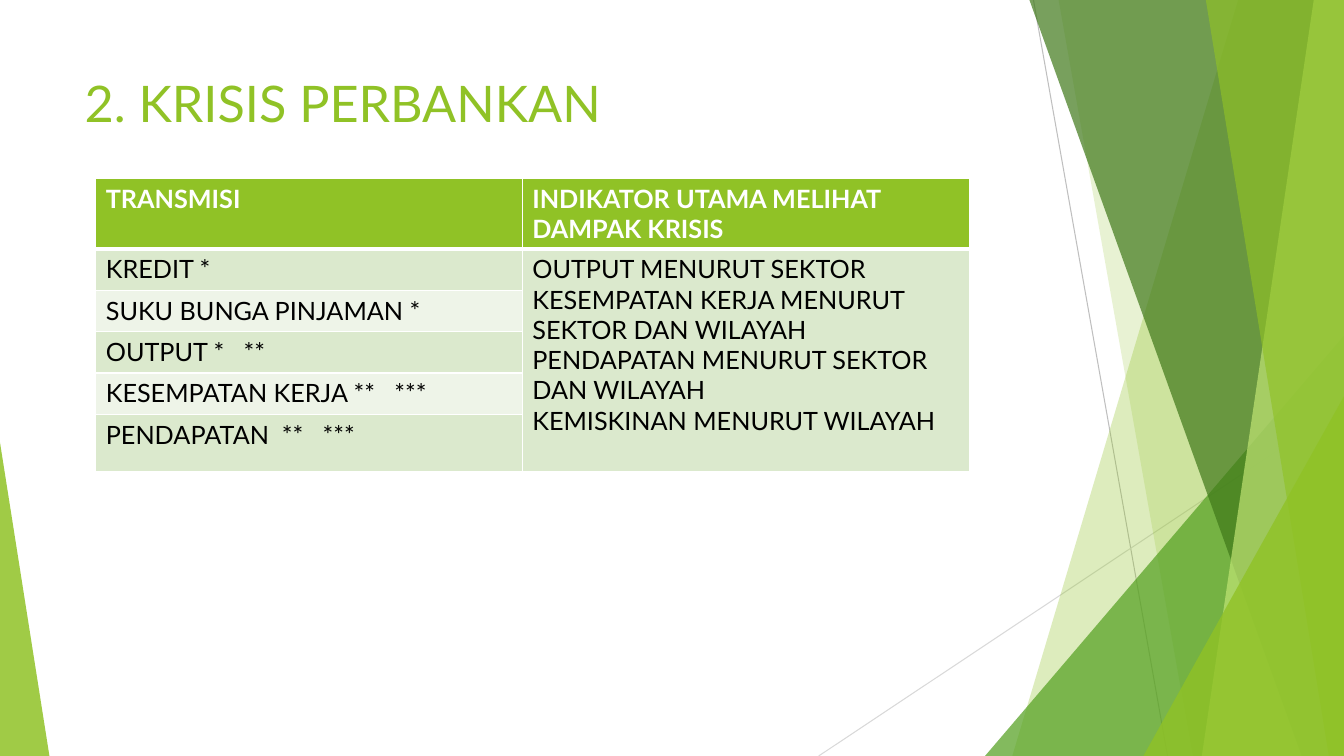
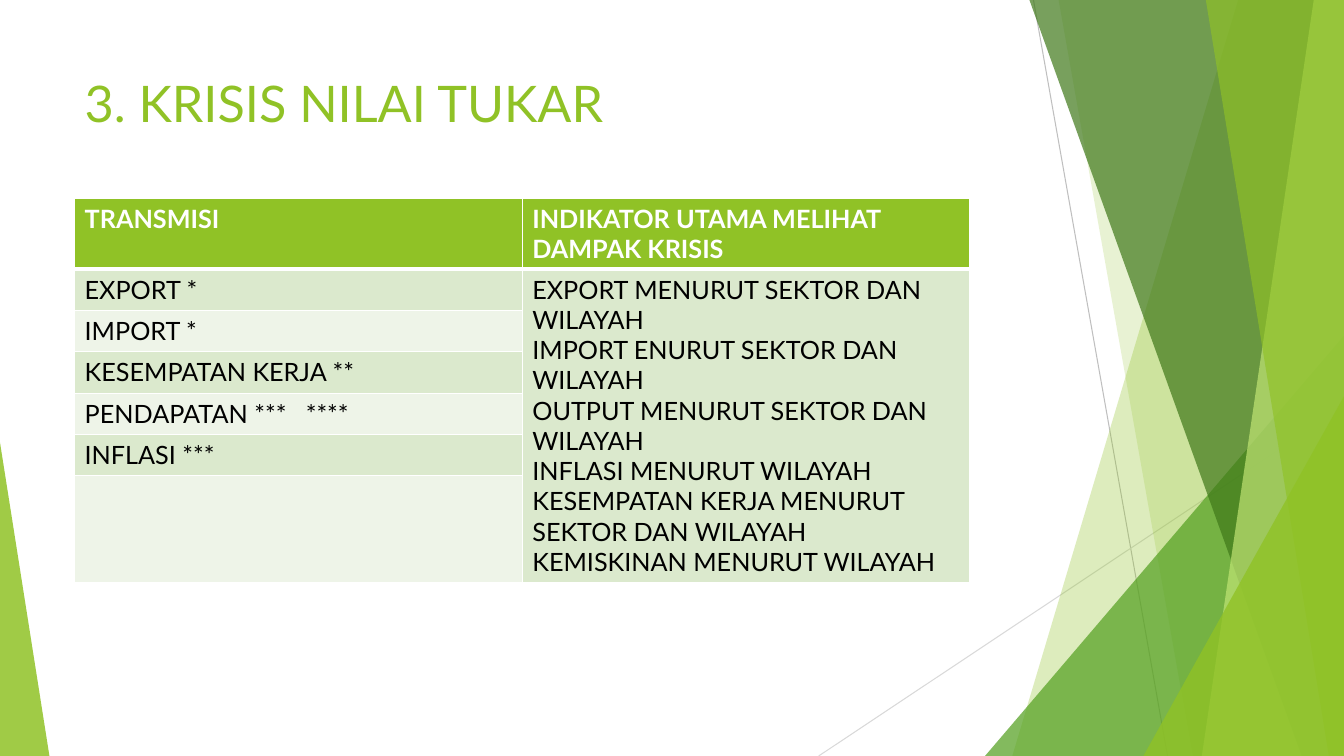
from lxml import etree
from pptx import Presentation
from pptx.dml.color import RGBColor
from pptx.enum import shapes
from pptx.oxml import ns
from pptx.util import Inches, Pt

# Content
HEADINGS = ("TRANSMISI", "INDIKATOR UTAMA MELIHAT DAMPAK KRISIS")
CRISES = [
    {
        "title": "2. KRISIS PERBANKAN",
        "at": (0.95, 1.77), "columns": (4.23, 4.44), "height": 2.9,
        "channels": ["KREDIT *", "SUKU BUNGA PINJAMAN *", "OUTPUT *   **",
                     "KESEMPATAN KERJA **   ***", "PENDAPATAN  **   ***"],
        "indicators": ["OUTPUT MENURUT SEKTOR",
                       "KESEMPATAN KERJA MENURUT SEKTOR DAN WILAYAH",
                       "PENDAPATAN MENURUT SEKTOR DAN WILAYAH",
                       "KEMISKINAN MENURUT WILAYAH"],
    },
    {
        "title": "3. KRISIS NILAI TUKAR",
        "at": (0.74, 1.97), "columns": (4.44, 4.44), "height": 3.8,
        "channels": ["EXPORT *", "IMPORT *", "KESEMPATAN KERJA **",
                     "PENDAPATAN ***   ****", "INFLASI ***", ""],
        "indicators": ["EXPORT MENURUT SEKTOR DAN WILAYAH",
                       "IMPORT ENURUT SEKTOR DAN WILAYAH",
                       "OUTPUT MENURUT SEKTOR DAN WILAYAH",
                       "INFLASI MENURUT WILAYAH",
                       "KESEMPATAN KERJA MENURUT SEKTOR DAN WILAYAH",
                       "KEMISKINAN MENURUT WILAYAH"],
    },
]

# Shared look
WIDTH, HEIGHT = 13.33, 7.5
FONT = "Lato"
GREEN, WHITE, BLACK = "90C226", "FFFFFF", "000000"
BANDS = ("DBE9CD", "EEF4E8")
HEADER_HEIGHT, ROW_HEIGHT = 0.69, 0.41

# Thin lines: start, end, colour
RAYS = [((10.25, 0), (11.58, HEIGHT), "BFBFBF"),
        ((WIDTH, 4.03), (8.12, HEIGHT), "D9D9D9")]
# Facets, back to front, all reaching the right edge or a slide corner.
# Blade: left x at top, left x at bottom. Corner: left, top, width, apex.
FACETS = [("blade", (12.28, 10.04), GREEN, 30),
          ("blade", (10.5, 11.83), GREEN, 20),
          ("corner", (9.77, 3.33, 3.56, 1), "54A021", 72),
          ("blade", (10.21, 12.91), "3F7819", 70),
          ("blade", (13.03, 11.92), "C0E474", 70),
          ("blade", (11.96, 13.18), GREEN, 65),
          ("corner", (11.34, 3.93, 1.99, 1), GREEN, 80),
          ("corner", (0, 4.39, 0.49, 0), GREEN, 85)]


def rgb(color):
    return RGBColor.from_string(color)


def style_text(paragraph, size, color, bold=False):
    font = paragraph.font
    font.name, font.size, font.bold = FONT, Pt(size), bold
    font.color.rgb = rgb(color)


def draw_ray(slide, start, end, color):
    ray = slide.shapes.add_connector(
        shapes.MSO_CONNECTOR.STRAIGHT, *map(Inches, start + end))
    ray.line.color.rgb = rgb(color)
    ray.line.width = Pt(0.75)
    etree.SubElement(ray._element.spPr, ns.qn("a:effectLst"))


def draw_facet(slide, kind, geometry, color, opacity):
    if kind == "blade":
        top_x, bottom_x = geometry
        outline = slide.shapes.build_freeform(Inches(top_x), 0)
        corners = [(WIDTH, 0), (WIDTH, HEIGHT), (bottom_x, HEIGHT)]
        outline.add_line_segments(
            [(Inches(x), Inches(y)) for x, y in corners], close=True)
        facet = outline.convert_to_shape()
    else:
        left, top, width, apex = geometry
        facet = slide.shapes.add_shape(
            shapes.MSO_SHAPE.ISOSCELES_TRIANGLE,
            *map(Inches, (left, top, width, HEIGHT - top)))
        facet.adjustments[0] = apex
    facet.shadow.inherit = False
    facet.line.fill.background()
    facet.fill.solid()
    facet.fill.fore_color.rgb = rgb(color)
    tint = facet._element.spPr.find(".//" + ns.qn("a:srgbClr"))
    etree.SubElement(tint, ns.qn("a:alpha"), val=str(opacity * 1000))


def add_title(slide, title):
    box = slide.shapes.add_textbox(*map(Inches, (0.74, 0.67, 9.4, 1.44)))
    box.text_frame.word_wrap = True
    box.text_frame.text = title
    style_text(box.text_frame.paragraphs[0], 36, GREEN)


def style_cell(cell, fill, color, bold, bottom):
    cell.fill.solid()
    cell.fill.fore_color.rgb = rgb(fill)
    for paragraph in cell.text_frame.paragraphs:
        style_text(paragraph, 18, color, bold)
    # Borders come before the fill in the cell properties
    props = cell._tc.get_or_add_tcPr()
    widths = {"lnL": 1, "lnR": 1, "lnT": 1, "lnB": bottom}
    for place, (side, width) in enumerate(widths.items()):
        border = etree.Element(ns.qn("a:" + side), w=str(Pt(width)))
        paint = etree.SubElement(border, ns.qn("a:solidFill"))
        etree.SubElement(paint, ns.qn("a:srgbClr"), val=WHITE)
        props.insert(place, border)


def add_crisis_table(slide, crisis):
    channels, columns = crisis["channels"], crisis["columns"]
    count = len(channels)
    table = slide.shapes.add_table(
        count + 1, 2,
        *map(Inches, (*crisis["at"], sum(columns), crisis["height"]))).table

    # The last row takes the height that is left
    heights = [HEADER_HEIGHT] + [ROW_HEIGHT] * (count - 1)
    heights.append(crisis["height"] - sum(heights))
    for row, height in zip(table.rows, heights):
        row.height = Inches(height)
    for column, width in zip(table.columns, columns):
        column.width = Inches(width)

    for column, heading in enumerate(HEADINGS):
        table.cell(0, column).text = heading
    for row, channel in enumerate(channels, 1):
        table.cell(row, 0).text = channel
    table.cell(1, 1).merge(table.cell(count, 1))
    table.cell(1, 1).text = "\n".join(crisis["indicators"])

    for row in range(count + 1):
        for column in range(2):
            cell = table.cell(row, column)
            if row == 0:
                style_cell(cell, GREEN, WHITE, True, 3)
            else:
                band = BANDS[0] if column else BANDS[(row - 1) % 2]
                style_cell(cell, band, BLACK, False, 1)


def main():
    deck = Presentation()
    deck.slide_width, deck.slide_height = Inches(WIDTH), Inches(HEIGHT)
    for crisis in CRISES:
        slide = deck.slides.add_slide(deck.slide_layouts[6])
        for ray in RAYS:
            draw_ray(slide, *ray)
        for facet in FACETS:
            draw_facet(slide, *facet)
        add_title(slide, crisis["title"])
        add_crisis_table(slide, crisis)
    deck.save("out.pptx")


if __name__ == "__main__":
    main()
